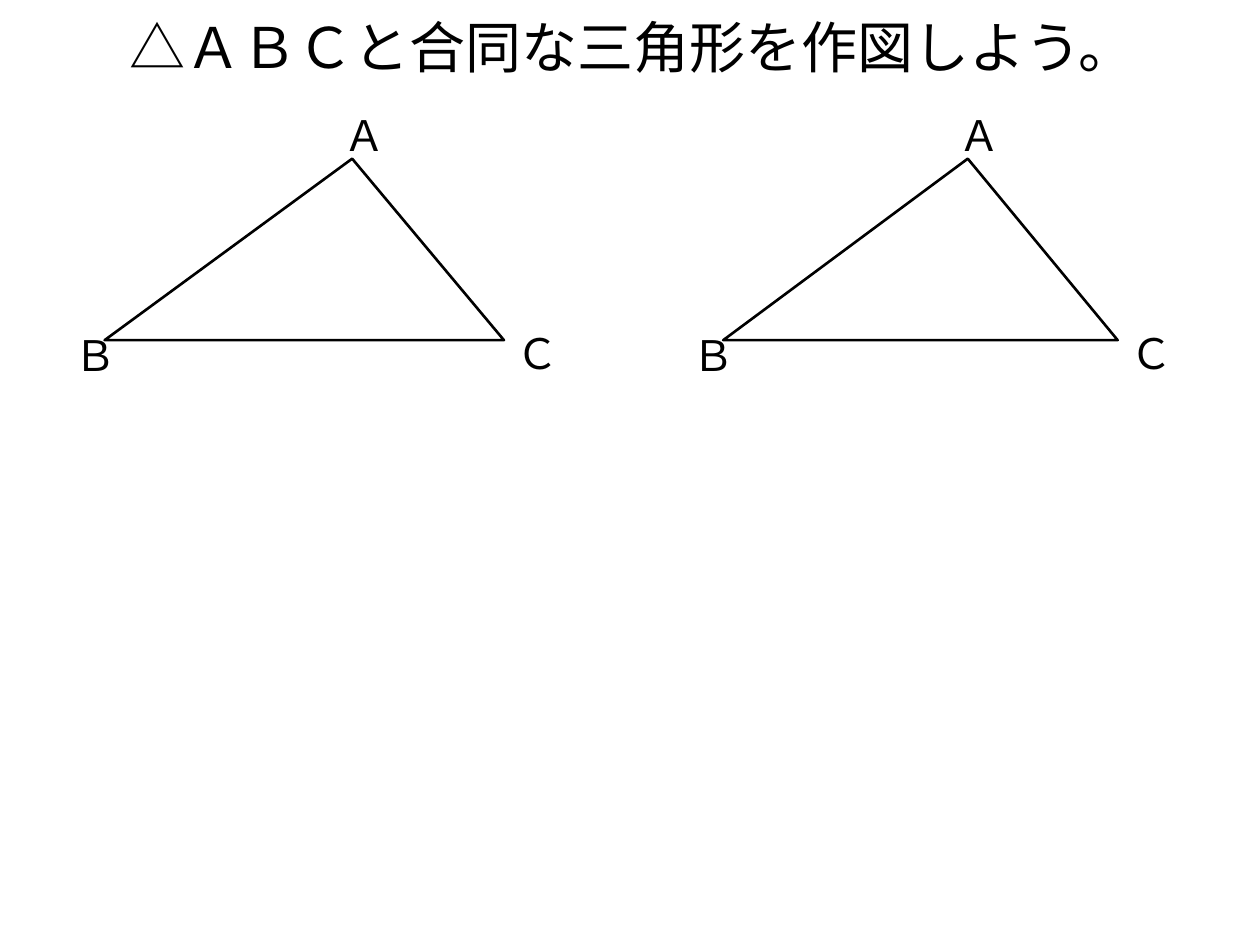
import pptx
import pptx.util
import pptx.dml.color
import pptx.enum.text

Pt = pptx.util.Pt
Enum = pptx.enum.text
INK = "000000"
HEAD = {"word_wrap": True, "vertical_anchor": Enum.MSO_ANCHOR.MIDDLE}
LABEL = {"word_wrap": False, "auto_size": Enum.MSO_AUTO_SIZE.SHAPE_TO_FIT_TEXT}


def color(text):
    return pptx.dml.color.RGBColor.from_string(text)


def style(item, values):
    for name, value in values.items():
        setattr(item, name, value)


def write(shapes, box, text, size, frame, align):
    body = shapes.add_textbox(*map(Pt, box)).text_frame
    style(body, frame)
    line = body.paragraphs[0]
    line.alignment = align
    run = line.add_run()
    run.text = text
    style(run.font, {"name": "Calibri", "size": Pt(size)})
    run.font.color.rgb = color(INK)


def title(slide, box):
    write(slide.shapes, box, "△ＡＢＣと合同な三角形を作図しよう。", 32,
          HEAD, Enum.PP_ALIGN.CENTER)


def triangle(slide, box):
    left, top, width, height = box
    base = top + height
    tip, start, end = (left + width * 0.62, top), (left, base), (left + width, base)
    group = slide.shapes.add_group_shape()
    pen = group.shapes.build_freeform(*map(Pt, tip))
    pen.add_line_segments([tuple(map(Pt, spot)) for spot in (start, end)], close=True)
    shape = pen.convert_to_shape()
    shape.shadow.inherit = False
    shape.fill.background()
    shape.line.color.rgb = color(INK)
    shape.line.width = Pt(1.5)
    for text, spot, shift in (("Ａ", tip, (-12.2, -31.7)),
                              ("Ｃ", end, (0, -10.8)),
                              ("Ｂ", start, (-24.5, -9.4))):
        place = (spot[0] + shift[0], spot[1] + shift[1], 30.5, 32.4)
        write(group.shapes, place, text, 24, LABEL, Enum.PP_ALIGN.LEFT)


def main():
    deck = pptx.Presentation()
    style(deck, {"slide_width": Pt(720), "slide_height": Pt(540)})
    slide = deck.slides.add_slide(deck.slide_layouts[6])
    title(slide, (37.4, 9.4, 648, 33.8))
    for left, width in ((59.8, 228.2), (413.3, 225.4)):
        triangle(slide, (left, 90.7, width, 103.7))
    deck.save("out.pptx")


if __name__ == "__main__":
    main()
